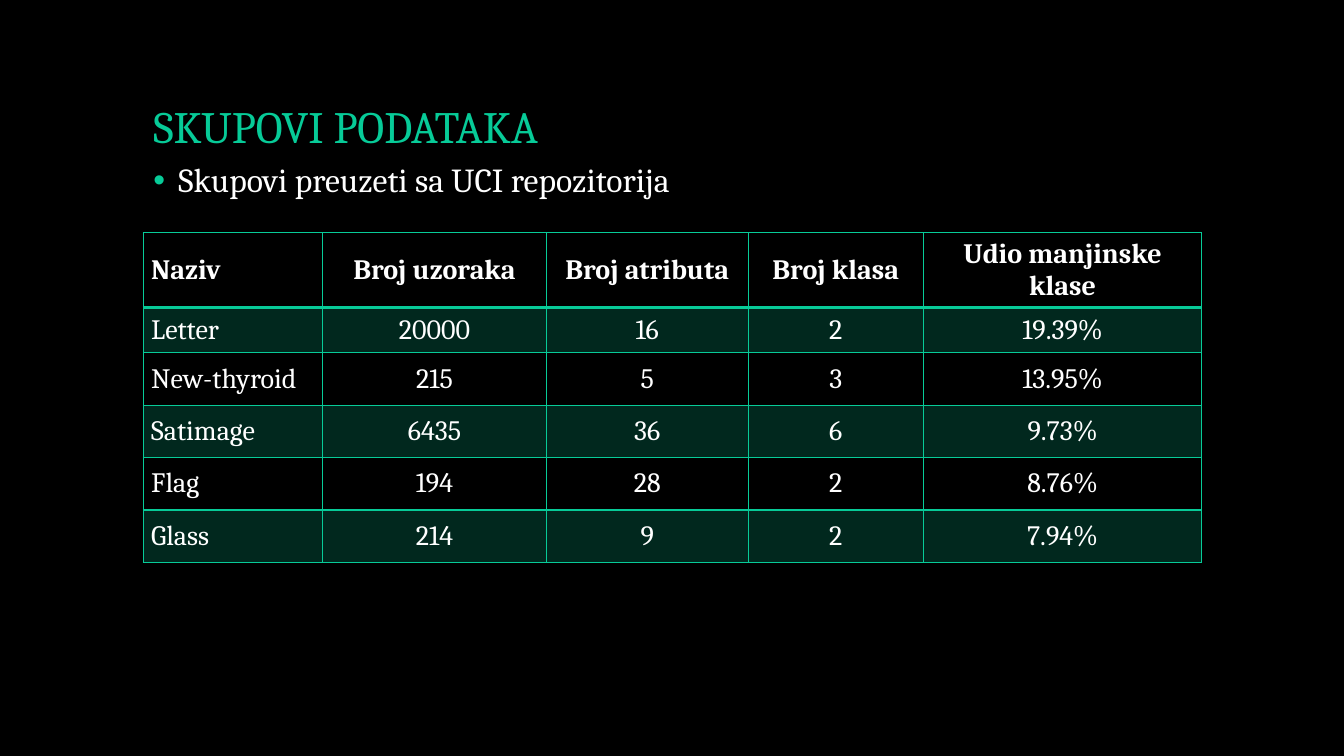
from lxml import etree
from pptx import Presentation
from pptx import util as u
from pptx.dml.color import RGBColor
from pptx.enum import text
from pptx.oxml import ns

COLORS = {"background": "000000", "accent": "07CB98", "text": "FFFFFF"}
FONT = "Cambria"
LEFT, WIDTH = u.Inches(1.42), u.Inches(10.5)


def format_runs(paragraph, size, color, bold=False):
    for run in paragraph.runs:
        run.font.name = FONT
        run.font.size = u.Pt(size)
        run.font.bold = bold
        run.font.color.rgb = RGBColor.from_string(COLORS[color])


def add_element(parent, tag, **attributes):
    return etree.SubElement(parent, ns.qn(tag), attributes)


presentation = Presentation()
presentation.slide_width = u.Inches(13.33)
presentation.slide_height = u.Inches(7.5)
slide = presentation.slides.add_slide(presentation.slide_layouts[1])
slide.background.fill.solid()
slide.background.fill.fore_color.rgb = RGBColor.from_string(COLORS["background"])

# Title and bullet
title, body = slide.shapes.title, slide.placeholders[1]
placeholders = [
    (title, 0.4, 1.17, "SKUPOVI PODATAKA", 32, "accent", text.MSO_ANCHOR.BOTTOM),
    (body, 1.57, 1.49, "Skupovi preuzeti sa UCI repozitorija", 24, "text",
     text.MSO_ANCHOR.TOP),
]
for shape, top, height, wording, size, color, anchor in placeholders:
    shape.left, shape.top = LEFT, u.Inches(top)
    shape.width, shape.height = WIDTH, u.Inches(height)
    frame = shape.text_frame
    frame.text = wording
    frame.word_wrap = True
    frame.auto_size = text.MSO_AUTO_SIZE.NONE
    frame.vertical_anchor = anchor
    paragraph = frame.paragraphs[0]
    paragraph.alignment = text.PP_ALIGN.LEFT
    paragraph.line_spacing = 0.9
    format_runs(paragraph, size, color)

bullet = body.text_frame.paragraphs[0]
bullet.space_before = u.Pt(18)
properties = bullet._p.get_or_add_pPr()
properties.set("marL", str(u.Inches(0.25)))
properties.set("indent", str(-u.Inches(0.25)))
bullet_color = add_element(properties, "a:buClr")
add_element(bullet_color, "a:srgbClr", val=COLORS["accent"])
add_element(properties, "a:buFont", typeface="Arial")
add_element(properties, "a:buChar", char="•")

# Table of data sets
rows = [
    ("Naziv", "Broj uzoraka", "Broj atributa", "Broj klasa", "Udio manjinske klase"),
    ("Letter", "20000", "16", "2", "19.39%"),
    ("New-thyroid", "215", "5", "3", "13.95%"),
    ("Satimage", "6435", "36", "6", "9.73%"),
    ("Flag", "194", "28", "2", "8.76%"),
    ("Glass", "214", "9", "2", "7.94%"),
]
column_widths = [1.78, 2.22, 2, 1.74, 2.76]
row_heights = [0.45, 0.45] + [0.52] * 4
table = slide.shapes.add_table(len(rows), len(column_widths), LEFT, u.Inches(2.31),
                               WIDTH, u.Inches(sum(row_heights))).table
for column, width in zip(table.columns, column_widths):
    column.width = u.Inches(width)
for row, height in zip(table.rows, row_heights):
    row.height = u.Inches(height)

for row_index, values in enumerate(rows):
    for column_index, value in enumerate(values):
        cell = table.cell(row_index, column_index)
        cell.text_frame.text = value
        cell.vertical_anchor = text.MSO_ANCHOR.MIDDLE
        cell.margin_left = cell.margin_right = u.Inches(0.08)
        cell.margin_top = cell.margin_bottom = u.Inches(0.05)
        paragraph = cell.text_frame.paragraphs[0]
        paragraph.alignment = text.PP_ALIGN.CENTER if column_index else text.PP_ALIGN.LEFT
        format_runs(paragraph, 20, "text", bold=row_index == 0)

        # Borders, with a thicker rule under the header
        cell_properties = cell._tc.get_or_add_tcPr()
        thick_side = {0: "B", 1: "T"}.get(row_index)
        for side in "LRTB":
            points = 2 if side == thick_side else 1
            border = add_element(cell_properties, f"a:ln{side}", w=str(u.Pt(points)))
            border_fill = add_element(border, "a:solidFill")
            add_element(border_fill, "a:srgbClr", val=COLORS["accent"])

        # Translucent fill on every other data row
        if row_index % 2:
            cell.fill.solid()
            cell.fill.fore_color.rgb = RGBColor.from_string(COLORS["accent"])
            fill_color = cell_properties.find(ns.qn("a:solidFill")).find(ns.qn("a:srgbClr"))
            add_element(fill_color, "a:alpha", val="20000")
        else:
            cell.fill.background()

presentation.save("out.pptx")
